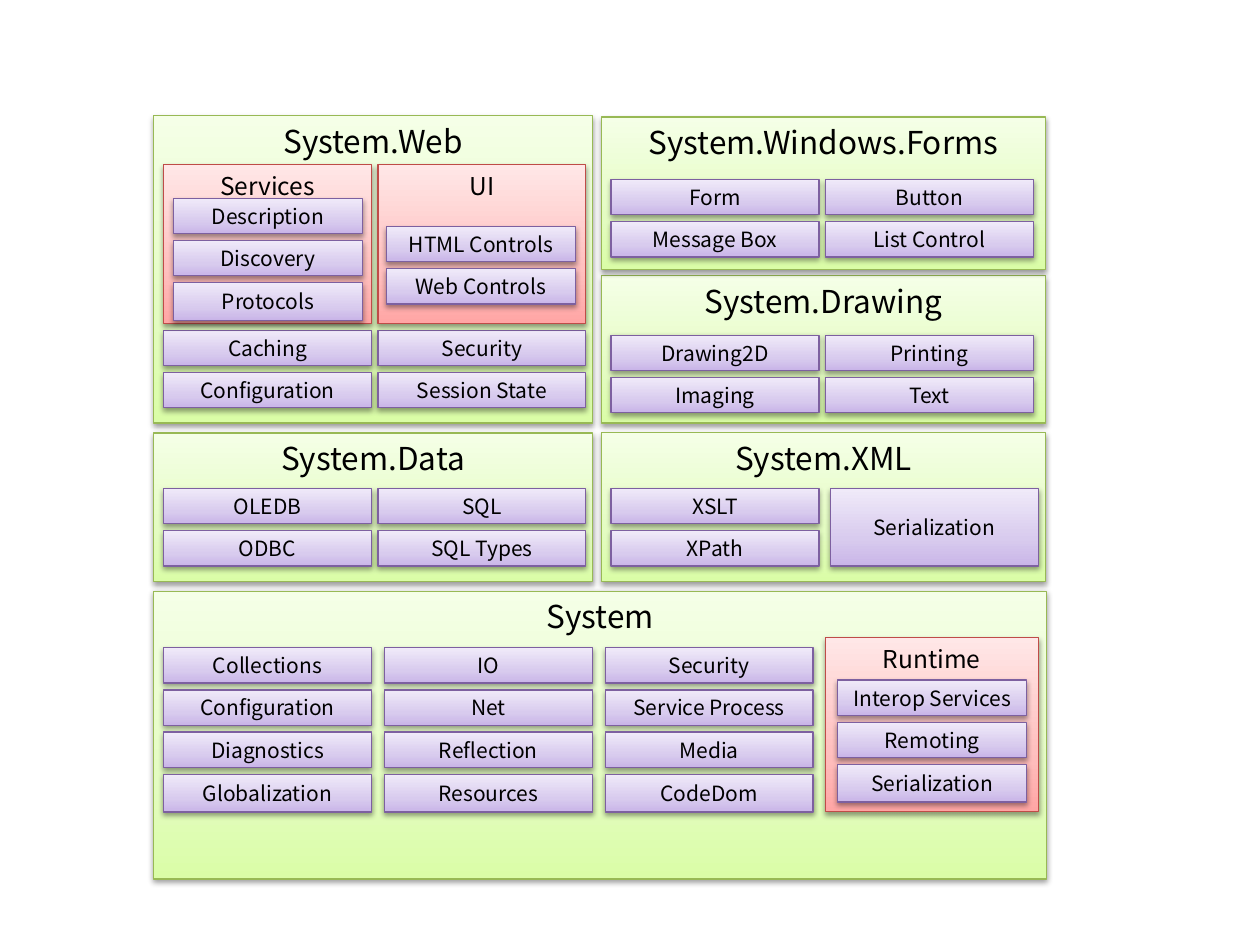
from copy import deepcopy
from dataclasses import dataclass

from lxml import etree
from pptx import Presentation
from pptx import util as u
from pptx.dml.color import RGBColor
from pptx.enum import shapes, text
from pptx.oxml.ns import qn


@dataclass(frozen=True)
class Style:
    gradient: tuple  # colours from bottom to top
    line: str
    size: int
    anchor: text.MSO_ANCHOR


@dataclass(frozen=True)
class Theme:
    font: str = "Noto Sans CJK KR"
    ink: str = "000000"
    stops: tuple = (0, 0.35, 1)
    namespace: Style = Style(("DAFDA7", "E4FCC2", "F5FFE7"), "98B955", 18, text.MSO_ANCHOR.TOP)
    group: Style = Style(("FFA6A5", "FFC0BF", "FFE7E7"), "BF4C48", 14, text.MSO_ANCHOR.TOP)
    item: Style = Style(("C9B5E8", "D8CBEE", "F0EAF9"), "7D60A0", 12, text.MSO_ANCHOR.MIDDLE)


THEME = Theme()

# All lengths are in centimetres.
ITEM_WIDTH, NARROW_WIDTH = 4.19, 3.81
ITEM_HEIGHT, LAST_HEIGHT = 0.71, 0.76
ROW_PITCH = 0.85
COLUMN_PITCH, WIDE_PITCH = 4.32, 4.45
LEFT, RIGHT = 3.1, 12.12
LEFT_ITEMS, RIGHT_ITEMS = 3.3, 12.32


def fill_gradient(shape, colours):
    shape.fill.gradient()
    shape.fill.gradient_angle = 90
    stop_list = shape._element.spPr.find(qn("a:gradFill")).find(qn("a:gsLst"))
    stop_list.append(deepcopy(stop_list[0]))
    for stop, position, colour in zip(shape.fill.gradient_stops, THEME.stops, colours):
        stop.position = position
        stop.color.rgb = RGBColor.from_string(colour)


def add_shadow(shape):
    shape.shadow.inherit = False
    effects = shape._element.spPr.find(qn("a:effectLst"))
    shadow = etree.SubElement(effects, qn("a:outerShdw"), blurRad=str(u.Pt(3.1)),
                              dist=str(u.Pt(1.6)), dir="5400000", rotWithShape="0")
    colour = etree.SubElement(shadow, qn("a:srgbClr"), val="000000")
    etree.SubElement(colour, qn("a:alpha"), val="38000")


def add_box(slide, label, style, left, top, width, height):
    shape = slide.shapes.add_shape(shapes.MSO_SHAPE.RECTANGLE,
                                   u.Cm(left), u.Cm(top), u.Cm(width), u.Cm(height))
    fill_gradient(shape, style.gradient)
    shape.line.color.rgb = RGBColor.from_string(style.line)
    shape.line.width = u.Pt(0.75)
    add_shadow(shape)
    shape.text_frame.vertical_anchor = style.anchor
    paragraph = shape.text_frame.paragraphs[0]
    paragraph.text = label
    paragraph.alignment = text.PP_ALIGN.CENTER
    paragraph.font.name = THEME.font
    paragraph.font.size = u.Pt(style.size)
    paragraph.font.color.rgb = RGBColor.from_string(THEME.ink)


def add_items(slide, columns, left, top, width=ITEM_WIDTH, pitch=COLUMN_PITCH):
    """Draw columns of items; the last row of a long column is a little taller."""
    for column, labels in enumerate(columns):
        for row, label in enumerate(labels):
            is_long_end = row >= 2 and row == len(labels) - 1
            height = LAST_HEIGHT if is_long_end else ITEM_HEIGHT
            add_box(slide, label, THEME.item, left + column * pitch,
                    top + row * ROW_PITCH, width, height)


def add_group(slide, label, items, box, items_left, items_top):
    add_box(slide, label, THEME.group, *box)
    add_items(slide, [items], items_left, items_top, width=NARROW_WIDTH)


def add_system(slide):
    add_box(slide, "System", THEME.namespace, LEFT, 11.92, 18, 5.8)
    add_items(slide, [
        ("Collections", "Configuration", "Diagnostics", "Globalization"),
        ("IO", "Net", "Reflection", "Resources"),
        ("Security", "Service Process", "Media", "CodeDom"),
    ], LEFT_ITEMS, 13.06, pitch=WIDE_PITCH)
    add_group(slide, "Runtime", ("Interop Services", "Remoting", "Serialization"),
              (16.64, 12.85, 4.29, 3.51), 16.89, 13.71)


def add_data(slide):
    add_box(slide, "System.Data", THEME.namespace, LEFT, 8.73, 8.84, 3)
    add_items(slide, [("OLEDB", "ODBC"), ("SQL", "SQL Types")], LEFT_ITEMS, 9.85)


def add_xml(slide):
    add_box(slide, "System.XML", THEME.namespace, RIGHT, 8.72, 8.96, 3)
    add_items(slide, [("XSLT", "XPath")], RIGHT_ITEMS, 9.85)
    add_box(slide, "Serialization", THEME.item, 16.74, 9.85,
            ITEM_WIDTH, ROW_PITCH + ITEM_HEIGHT)


def add_web(slide):
    add_box(slide, "System.Web", THEME.namespace, LEFT, 2.33, 8.84, 6.2)
    add_items(slide, [("Caching", "Configuration"), ("Security", "Session State")],
              LEFT_ITEMS, 6.66)
    add_group(slide, "Services", ("Description", "Discovery", "Protocols"),
              (LEFT_ITEMS, 3.32, ITEM_WIDTH, 3.2), 3.5, 4)
    add_group(slide, "UI", ("HTML Controls", "Web Controls"),
              (LEFT_ITEMS + COLUMN_PITCH, 3.32, ITEM_WIDTH, 3.2), 7.79, 4.57)


def add_drawing(slide):
    add_box(slide, "System.Drawing", THEME.namespace, RIGHT, 5.56, 8.96, 2.97)
    add_items(slide, [("Drawing2D", "Imaging"), ("Printing", "Text")], RIGHT_ITEMS, 6.76)


def add_forms(slide):
    add_box(slide, "System.Windows.Forms", THEME.namespace, RIGHT, 2.36, 8.96, 3.07)
    add_items(slide, [("Form", "Message Box"), ("Button", "List Control")],
              RIGHT_ITEMS, 3.62)


def main():
    presentation = Presentation()
    presentation.slide_width, presentation.slide_height = u.Cm(25.4), u.Cm(19.05)
    slide = presentation.slides.add_slide(presentation.slide_layouts[6])
    for add_section in (add_system, add_data, add_xml, add_web, add_drawing, add_forms):
        add_section(slide)
    presentation.save("out.pptx")


if __name__ == "__main__":
    main()
